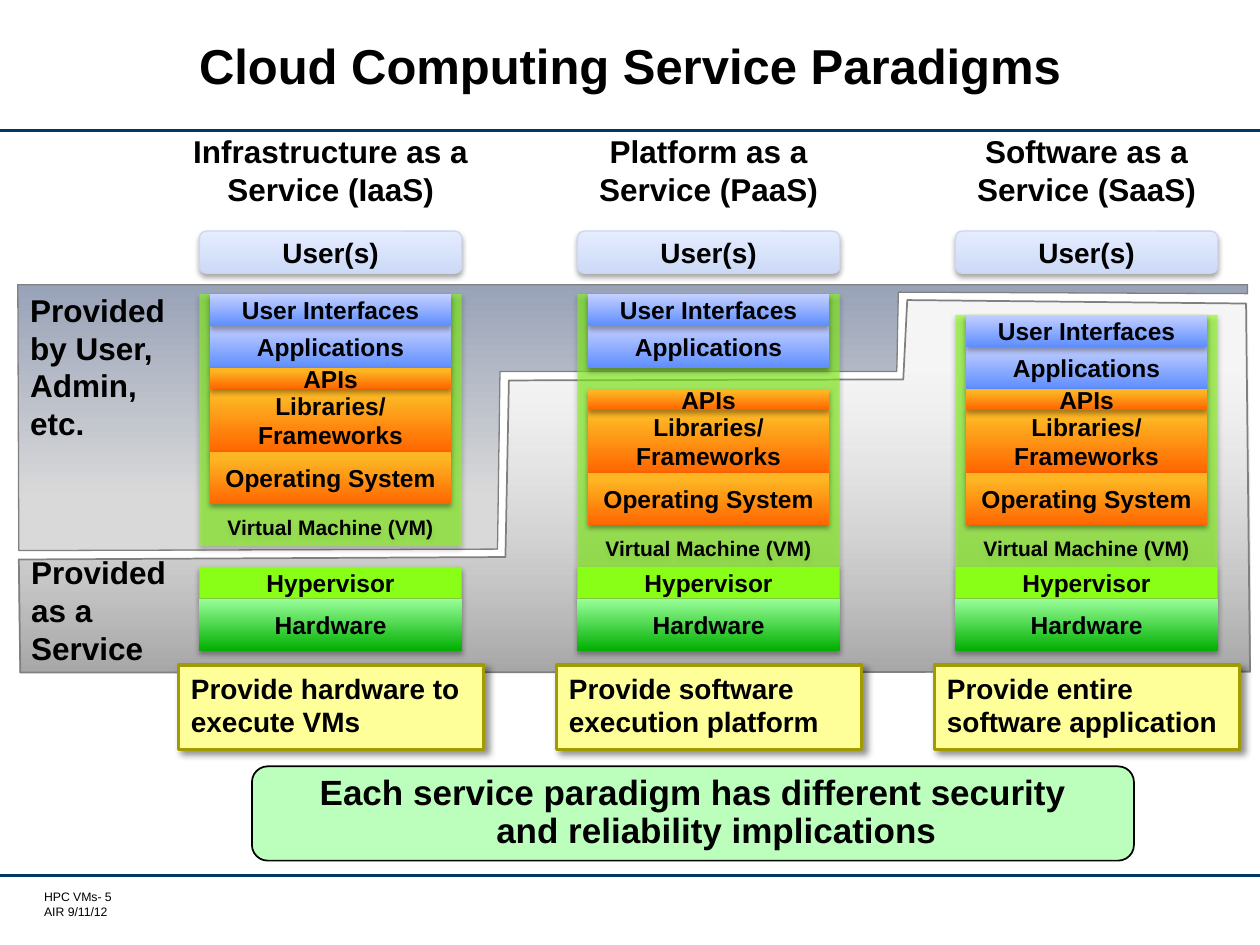
from dataclasses import dataclass
from typing import NamedTuple, Optional

from lxml import etree
from pptx import Presentation, util as u
from pptx.dml.color import RGBColor
from pptx.enum import shapes, text
from pptx.oxml.ns import qn

COLORS = {
    "black": "000000", "rule": "003767", "panel_edge": "808080",
    "grey": "D9D9D9", "dark_grey": "A6A6A6", "slate": "99A3B8",
    "user_low": "CDDAF7", "user_high": "E4ECFF", "user_edge": "CDD7ED",
    "blue_low": "5F8EFF", "blue_high": "C4D0FF",
    "orange_low": "FF6600", "orange_high": "FDB523",
    "green_low": "00AE00", "green_high": "99FF99", "lime": "89FF18",
    "note": "FFFF99", "note_edge": "A19A00", "summary": "BCFFBC",
}


class Stop(NamedTuple):
    position: int
    color: str
    alpha: int = 100


class Shadow(NamedTuple):
    alpha: int
    blur: float
    distance: float
    direction: int


class Box(NamedTuple):
    left: float
    top: float
    width: float
    height: float

    def lengths(self) -> list:
        return [u.Cm(value) for value in self]


class Layer(NamedTuple):
    label: str
    height: float
    paint: list
    in_front: bool = False


@dataclass
class Column:
    heading: str
    heading_width: float
    note: str
    stack_top: float
    vm_bottom: float
    gap_above_apis: float = 0


# Paints: one stop is a solid fill, several are a gradient
USER = [Stop(0, "user_low"), Stop(100, "user_high")]
BLUE = [Stop(0, "blue_low"), Stop(100, "blue_high")]
ORANGE = [Stop(0, "orange_low"), Stop(87, "orange_high"), Stop(100, "orange_high")]
GREEN = [Stop(0, "green_low"), Stop(100, "green_high")]
LIME, VM = [Stop(0, "lime")], [Stop(0, "lime", 60)]
SERVICE_PANEL = [Stop(0, "dark_grey"), Stop(81, "grey", 25), Stop(100, "grey", 25)]
USER_PANEL = [Stop(0, "slate"), Stop(80, "grey"), Stop(100, "grey")]

SOFT = Shadow(35, 3.1, 1.8, 90)
NOTE_SHADOW = Shadow(43, 4, 3, 45)

# Column grid in centimetres
FIRST_LEFT, PITCH, WIDTH, INSET = 4.02, 7.62, 5.29, 0.21
LAYERS = [
    Layer("User Interfaces", 0.64, BLUE, True),
    Layer("Applications", 0.85, BLUE),
    Layer("APIs", 0.42, ORANGE, True),
    Layer("Libraries/\vFrameworks", 1.27, ORANGE),
    Layer("Operating System", 1.06, ORANGE),
]
COLUMNS = [
    Column("Infrastructure as a Service (IaaS)", 6.15,
           "Provide hardware to execute VMs", 5.93, 11.01),
    Column("Platform as a Service (PaaS)", WIDTH,
           "Provide software execution platform", 5.93, 11.43, 0.42),
    Column("Software as a Service (SaaS)", WIDTH,
           "Provide entire software application", 6.35, 11.43),
]
SERVICE_OUTLINE = [(0.38, 11.28), (0.41, 13.56), (25.2, 13.54), (25.12, 6.12),
                   (18.29, 6.05), (18.21, 7.65), (10.26, 7.67), (10.19, 11.23)]
USER_OUTLINE = [(0.38, 11.1), (0.36, 5.74), (25.15, 5.74), (25.15, 5.92),
                (18.11, 5.89), (18.08, 7.49), (10.08, 7.49), (10.03, 11.07)]

TOP, MIDDLE, BOTTOM = (text.MSO_ANCHOR.TOP, text.MSO_ANCHOR.MIDDLE,
                       text.MSO_ANCHOR.BOTTOM)
LEFT, CENTER = text.PP_ALIGN.LEFT, text.PP_ALIGN.CENTER
RECTANGLE = shapes.MSO_SHAPE.RECTANGLE
ROUNDED = shapes.MSO_SHAPE.ROUNDED_RECTANGLE


def rgb(name: str) -> RGBColor:
    return RGBColor.from_string(COLORS[name])


def add_color(parent, name: str, alpha: int) -> None:
    color = etree.SubElement(parent, qn("a:srgbClr"), val=COLORS[name])
    if alpha < 100:
        etree.SubElement(color, qn("a:alpha"), val=str(alpha * 1000))


def paint_shape(shape, paint: list, angle: int = 90) -> None:
    """Fill a shape; the angle runs counter-clockwise."""
    if len(paint) == 1:
        shape.fill.solid()
        shape.fill.fore_color.rgb = rgb(paint[0].color)
        solid = shape._element.spPr.find(qn("a:solidFill"))
        solid.clear()
        add_color(solid, paint[0].color, paint[0].alpha)
        return
    shape.fill.gradient()
    shape.fill.gradient_angle = angle
    stops = shape._element.spPr.find(qn("a:gradFill")).find(qn("a:gsLst"))
    stops.clear()
    for stop in paint:
        node = etree.SubElement(stops, qn("a:gs"), pos=str(stop.position * 1000))
        add_color(node, stop.color, stop.alpha)


def outline_shape(shape, color: Optional[str], width: float) -> None:
    if color is None:
        shape.line.fill.background()
    else:
        shape.line.color.rgb = rgb(color)
        shape.line.width = u.Pt(width)


def set_shadow(shape, shadow: Optional[Shadow]) -> None:
    shape.shadow.inherit = False
    if shadow:
        effects = shape._element.spPr.find(qn("a:effectLst"))
        outer = etree.SubElement(
            effects, qn("a:outerShdw"), blurRad=str(u.Pt(shadow.blur)),
            dist=str(u.Pt(shadow.distance)), dir=str(shadow.direction * 60000),
            rotWithShape="0")
        add_color(outer, "black", shadow.alpha)


def write(shape, words: str, size: float, align=CENTER, anchor=MIDDLE,
          bold: bool = True) -> None:
    frame = shape.text_frame
    frame.text = words
    frame.word_wrap = True
    frame.vertical_anchor = anchor
    for paragraph in frame.paragraphs:
        paragraph.alignment = align
        for run in paragraph.runs:
            run.font.name, run.font.size, run.font.bold = "Arial", u.Pt(size), bold
            run.font.color.rgb = rgb("black")


def add_block(slide, box: Box, words: str, size: float, paint: list, kind=RECTANGLE,
              edge: Optional[str] = None, edge_width: float = 0.75,
              shadow: Optional[Shadow] = SOFT, align=CENTER, anchor=MIDDLE):
    shape = slide.shapes.add_shape(kind, *box.lengths())
    paint_shape(shape, paint)
    outline_shape(shape, edge, edge_width)
    set_shadow(shape, shadow)
    write(shape, words, size, align, anchor)
    return shape


def add_panel(slide, outline: list, words: str, paint: list, angle: int,
              edge_width: float, anchor) -> None:
    points = [(u.Cm(x), u.Cm(y)) for x, y in outline]
    builder = slide.shapes.build_freeform(*points[0])
    builder.add_line_segments(points[1:], close=True)
    shape = builder.convert_to_shape()
    paint_shape(shape, paint, angle)
    outline_shape(shape, "panel_edge", edge_width)
    set_shadow(shape, None)
    write(shape, words, 18, LEFT, anchor)


def add_rule(slide, top: float) -> None:
    line = slide.shapes.add_connector(shapes.MSO_CONNECTOR.STRAIGHT,
                                      0, u.Cm(top), u.Cm(25.4), u.Cm(top))
    outline_shape(line, "rule", 1.75)
    etree.SubElement(line._element.spPr, qn("a:effectLst"))


def add_column(slide, column: Column, left: float) -> None:
    add_block(slide, Box(left, column.stack_top, WIDTH, column.vm_bottom - column.stack_top),
              "Virtual Machine (VM)", 12, VM, anchor=BOTTOM)
    add_block(slide, Box(left, 4.66, WIDTH, 0.85), "User(s)", 16, USER, ROUNDED, "user_edge")
    add_block(slide, Box(left, 11.43, WIDTH, 0.64), "Hypervisor", 14, LIME)
    add_block(slide, Box(left, 12.07, WIDTH, 1.06), "Hardware", 14, GREEN)

    # Software stack, with the front layers drawn last
    top, placed = column.stack_top, []
    for layer in LAYERS:
        if layer.label == "APIs":
            top += column.gap_above_apis
        placed.append((layer, Box(left + INSET, top, WIDTH - 2 * INSET, layer.height)))
        top += layer.height
    for layer, box in sorted(placed, key=lambda item: item[0].in_front):
        add_block(slide, box, layer.label, 14, layer.paint)

    heading_left = left + (WIDTH - column.heading_width) / 2
    heading = slide.shapes.add_textbox(
        *Box(heading_left, 2.54, column.heading_width, 1.8).lengths())
    write(heading, column.heading, 18, anchor=TOP)
    add_block(slide, Box(left - 0.42, 13.41, 6.15, 1.7), column.note, 16,
              [Stop(0, "note")], edge="note_edge", edge_width=2,
              shadow=NOTE_SHADOW, align=LEFT, anchor=TOP)


def main() -> None:
    presentation = Presentation()
    presentation.slide_width, presentation.slide_height = u.Cm(25.4), u.Cm(19.05)
    slide = presentation.slides.add_slide(presentation.slide_layouts[5])

    # Title and rules
    title = slide.shapes.title
    title.left, title.top, title.width, title.height = Box(2.62, 0.28, 20.16, 2.26).lengths()
    write(title, "Cloud Computing Service Paradigms", 28)
    title.text_frame.paragraphs[0].line_spacing = u.Pt(28)
    for top in (2.64, 17.65):
        add_rule(slide, top)

    # Panels behind the columns
    add_panel(slide, SERVICE_OUTLINE, "Provided\nas a\nService", SERVICE_PANEL, 90, 1, BOTTOM)
    add_panel(slide, USER_OUTLINE, "Provided\nby User,\nAdmin,\netc.", USER_PANEL, 270, 0.75, TOP)

    for index, column in enumerate(COLUMNS):
        add_column(slide, column, FIRST_LEFT + index * PITCH)

    # Summary
    summary = add_block(slide, Box(5.08, 15.45, 17.78, 1.9),
                        "Each service paradigm has different security\v"
                        "and reliability implications", 20, [Stop(0, "summary")],
                        ROUNDED, "black", 1, None)
    paragraph = summary.text_frame.paragraphs[0]
    paragraph.line_spacing = 0.9
    properties = paragraph._p.get_or_add_pPr()
    properties.set("marL", str(u.Cm(0.95)))
    properties.set("indent", str(u.Cm(-0.95)))

    # Footer
    footer = slide.shapes.add_textbox(*Box(0.89, 17.93, 3.02, 0.61).lengths())
    frame = footer.text_frame
    frame.margin_left = frame.margin_top = frame.margin_right = frame.margin_bottom = 0
    write(footer, "HPC VMs- 5\nAIR 9/11/12", 7, LEFT, TOP, bold=False)

    presentation.save("out.pptx")


if __name__ == "__main__":
    main()
